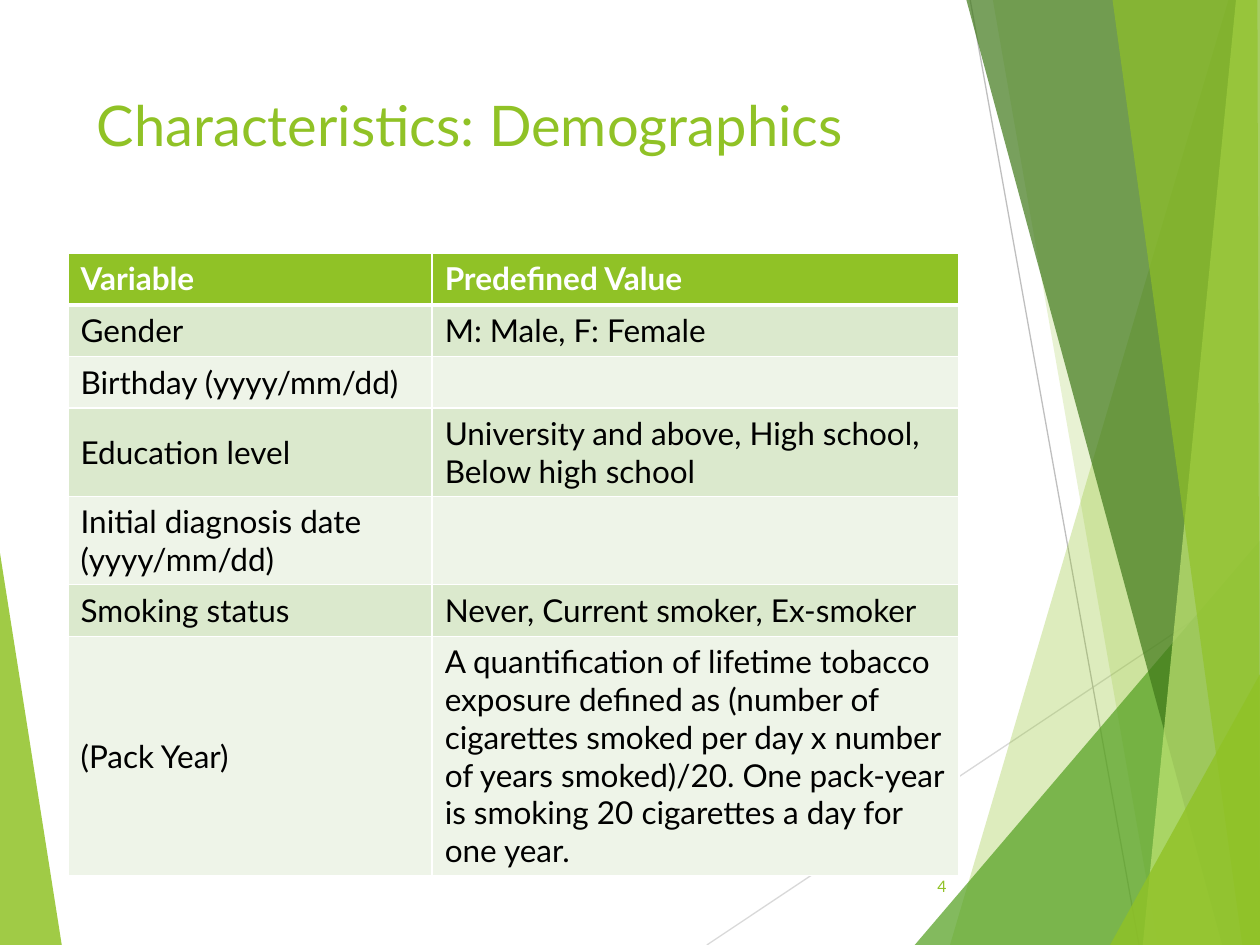
from lxml import etree
from pptx import Presentation
from pptx import util as u
from pptx.dml import color
from pptx.enum import shapes, text
from pptx.oxml import ns

GREEN, WHITE, BLACK = "90C226", "FFFFFF", "000000"
BANDS = ["DBE9CD", "EEF4E8"]
MID, TOP = text.MSO_ANCHOR.MIDDLE, text.MSO_ANCHOR.TOP


def rgb(code):
    return color.RGBColor.from_string(code)


def paint(fill, code, alpha=100):
    fill.solid()
    fill.fore_color.rgb = rgb(code)
    if alpha < 100:
        tone = fill._xPr.find(".//" + ns.qn("a:srgbClr"))
        etree.SubElement(tone, ns.qn("a:alpha"), val=str(alpha * 1000))


def write(frame, words, size=18, tone=BLACK, bold=False, align=text.PP_ALIGN.LEFT):
    frame.word_wrap = True
    para = frame.paragraphs[0]
    para.alignment = align
    para.font.size = u.Pt(size)
    if words:
        run = para.add_run()
        run.text = words
        font = run.font
        font.name, font.size, font.bold = "Lato", u.Pt(size), bold
        font.color.rgb = rgb(tone)


def edge(cell, side, width):
    line = etree.SubElement(cell._tc.get_or_add_tcPr(), ns.qn("a:ln" + side),
                            w=str(u.Pt(width)))
    fill = etree.SubElement(line, ns.qn("a:solidFill"))
    etree.SubElement(fill, ns.qn("a:srgbClr"), val=WHITE)


class Deck:
    def __init__(self, wide, high):
        self.prs = Presentation()
        self.prs.slide_width, self.prs.slide_height = u.Inches(wide), u.Inches(high)
        self.slide = self.prs.slides.add_slide(self.prs.slide_layouts[6])
        self.items = self.slide.shapes

    def shard(self, points, tone, alpha):
        spots = [(u.Inches(x), u.Inches(y)) for x, y in points]
        pen = self.items.build_freeform(*spots[0])
        pen.add_line_segments(spots[1:], close=True)
        shape = pen.convert_to_shape()
        shape.shadow.inherit = False
        paint(shape.fill, tone, alpha)
        shape.line.fill.background()

    def line(self, ends, tone):
        line = self.items.add_connector(shapes.MSO_CONNECTOR.STRAIGHT,
                                        *map(u.Inches, ends))
        line.line.color.rgb = rgb(tone)
        line.line.width = u.Pt(0.75)
        etree.SubElement(line._element.spPr, ns.qn("a:effectLst"))

    def label(self, box, words, anchor=TOP, **style):
        frame = self.items.add_textbox(*map(u.Inches, box)).text_frame
        frame.vertical_anchor = anchor
        write(frame, words, **style)

    def table(self, box, cols, highs, rows):
        grid = self.items.add_table(len(rows), len(cols), *map(u.Inches, box)).table
        for col, wide in zip(grid.columns, cols):
            col.width = u.Inches(wide)
        for i, (row, high) in enumerate(zip(rows, highs)):
            grid.rows[i].height = u.Inches(high)
            for j, words in enumerate(row):
                cell, head = grid.cell(i, j), i == 0
                for side in "LRTB":
                    thick = (head and side == "B") or (i == 1 and side == "T")
                    edge(cell, side, 3 if thick else 1)
                paint(cell.fill, GREEN if head else BANDS[(i - 1) % 2])
                cell.vertical_anchor = TOP if head else MID
                write(cell.text_frame, words, tone=WHITE if head else BLACK, bold=head)


SHARDS = [
    ([(7.54, 7.5), (9.75, 0), (10, 0), (10, 7.5)], GREEN, 30),
    ([(7.88, 0), (9.19, 7.5), (10, 7.5), (10, 0)], GREEN, 20),
    ([(7.26, 7.5), (10, 4.29), (10, 7.5)], "54A021", 72),
    ([(7.67, 0), (9.7, 7.5), (10, 7.5), (10, 0)], "3F7819", 70),
    ([(9.81, 0), (9.07, 7.5), (10, 7.5), (10, 0)], "C0E474", 70),
    ([(8.83, 0), (9.86, 7.5), (10, 7.5), (9.98, 0)], GREEN, 65),
    ([(8.81, 7.5), (10, 5.35), (10, 7.5)], GREEN, 80),
]
ROWS = [
    ("Variable", "Predefined Value"),
    ("Gender", "M: Male, F: Female"),
    ("Birthday (yyyy/mm/dd)", ""),
    ("Education level", "University and above, High school, Below high school"),
    ("Initial diagnosis date (yyyy/mm/dd)", ""),
    ("Smoking status", "Never, Current smoker, Ex-smoker"),
    ("(Pack Year)", "A quantification of lifetime tobacco exposure defined as "
     "(number of cigarettes smoked per day x number of years smoked)/20. "
     "One pack-year is smoking 20 cigarettes a day for one year."),
]


def main():
    deck = Deck(10, 7.5)
    deck.shard([(0, 4.39), (0.49, 7.5), (0, 7.5)], GREEN, 85)
    deck.line((5.61, 7.5, 10, 4.57), "D9D9D9")
    deck.line((7.7, 0, 9.04, 7.5), "BFBFBF")
    for shard in SHARDS:
        deck.shard(*shard)
    deck.label((0.67, 0.67, 6.94, 1.44), "Characteristics: Demographics",
               size=32, tone=GREEN)
    deck.table((0.54, 2.01, 7.07, 4.92), (2.89, 4.18), [0.41] * len(ROWS), ROWS)
    deck.label((7.05, 6.83, 0.56, 0.4), "4", anchor=MID, size=9, tone=GREEN,
               align=text.PP_ALIGN.RIGHT)
    deck.prs.save("out.pptx")


if __name__ == "__main__":
    main()
